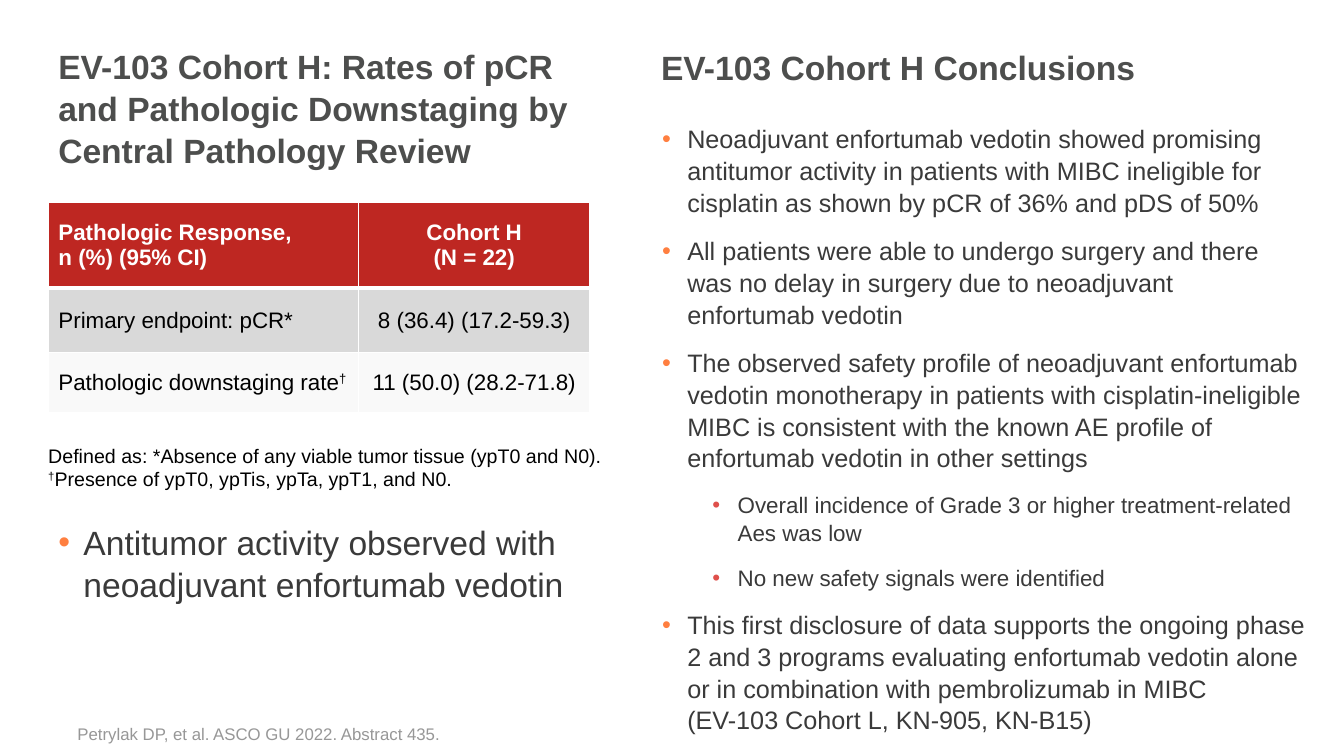
import pptx
import pptx.dml.color
import pptx.enum.text
import pptx.oxml
import pptx.oxml.ns
import pptx.util
from lxml import etree

Pt = pptx.util.Pt
ALIGN = pptx.enum.text.PP_ALIGN
ANCHOR = pptx.enum.text.MSO_ANCHOR

FONT = "Arial"
HEADING, BODY, BLACK, WHITE = "4D4E4D", "3A3A3A", "000000", "FFFFFF"
RED, GREY, PALE, CITATION = "BE2722", "D9D9D9", "F9F9F9", "979797"
LEVELS = [(18, "FF7F40", 18), (54, "DF504B", 16)]  # indent, bullet colour, text size

LEFT, COLUMN_W = 34.56, 386.64

# Text: a list of paragraphs; "^" before † raises it, "\n" breaks the line
LEFT_TITLE = ["EV-103 Cohort H: Rates of pCR and Pathologic Downstaging by "
              "Central Pathology Review"]
RIGHT_TITLE = ["EV-103 Cohort H Conclusions"]
FOOTNOTE = ["Defined as: *Absence of any viable tumor tissue (ypT0 and N0).",
            "^†Presence of ypT0, ypTis, ypTa, ypT1, and N0."]
SOURCE = ["Petrylak DP, et al. ASCO GU 2022. Abstract 435."]
SUMMARY = [(0, "Antitumor activity observed with neoadjuvant enfortumab vedotin")]
CONCLUSIONS = [
    (0, "Neoadjuvant enfortumab vedotin showed promising antitumor activity in patients "
        "with MIBC ineligible for cisplatin as shown by pCR of 36% and pDS of 50%"),
    (0, "All patients were able to undergo surgery and there was no delay in surgery "
        "due to neoadjuvant enfortumab vedotin"),
    (0, "The observed safety profile of neoadjuvant enfortumab vedotin monotherapy in "
        "patients with cisplatin-ineligible MIBC is consistent with the known AE profile "
        "of enfortumab vedotin in other settings"),
    (1, "Overall incidence of Grade 3 or higher treatment-related Aes was low"),
    (1, "No new safety signals were identified"),
    (0, "This first disclosure of data supports the ongoing phase 2 and 3 programs "
        "evaluating enfortumab vedotin alone or in combination with pembrolizumab in MIBC\n"
        "(EV-103 Cohort L, KN-905, KN-B15)"),
]

COL_WIDTHS = [221.76, 164.88]
ROWS = [  # height, fill, text colour, cells
    (61.2, RED, WHITE, [["Pathologic Response,\nn (%) (95% CI)"], ["Cohort H", "(N = 22)"]]),
    (46.08, GREY, BLACK, [["Primary endpoint: pCR*"], ["8 (36.4) (17.2-59.3)"]]),
    (42.48, PALE, BLACK, [["Pathologic downstaging rate^†"], ["11 (50.0) (28.2-71.8)"]]),
]


def rgb(value):
    return pptx.dml.color.RGBColor.from_string(value)


def add_run(p, text, size, color, bold=False):
    r = p.add_run()
    r.text = text
    r.font.name, r.font.size, r.font.bold = FONT, Pt(size), bold
    r.font.color.rgb = rgb(color)
    return r


def add_text(p, text, size, color, bold=False):
    """Write one paragraph, with its line breaks and raised daggers."""
    for i, line in enumerate(text.split("\n")):
        if i:
            p.add_line_break()
        before, raised, after = line.partition("^†")
        if before:
            add_run(p, before, size, color, bold)
        if raised:
            dagger = add_run(p, "†", size, color, bold)
            dagger.font._element.set("baseline", "30000")
        if after:
            add_run(p, after, size, color, bold)


def paragraphs(tf, items):
    for i, item in enumerate(items):
        yield (tf.add_paragraph() if i else tf.paragraphs[0]), item


def add_box(s, x, y, w, h, anchor=ANCHOR.TOP, wrap=True):
    tf = s.shapes.add_textbox(Pt(x), Pt(y), Pt(w), Pt(h)).text_frame
    tf.word_wrap, tf.vertical_anchor = wrap, anchor
    return tf


def add_plain(tf, lines, size, color, bold=False, spacing=1.0):
    for p, text in paragraphs(tf, lines):
        p.line_spacing = spacing
        add_text(p, text, size, color, bold)


def add_bullets(tf, items, size=None):
    for i, (p, (level, text)) in enumerate(paragraphs(tf, items)):
        indent, bullet_color, level_size = LEVELS[level]
        p.level = level
        p.line_spacing = 1.05
        p.space_before = Pt(12 if i else 0)
        pPr = p._p.get_or_add_pPr()
        pPr.set("marL", str(Pt(indent)))
        pPr.set("indent", str(-Pt(18)))
        clr = etree.SubElement(pPr, pptx.oxml.ns.qn("a:buClr"))
        etree.SubElement(clr, pptx.oxml.ns.qn("a:srgbClr"), val=bullet_color)
        etree.SubElement(pPr, pptx.oxml.ns.qn("a:buFont"), typeface=FONT)
        etree.SubElement(pPr, pptx.oxml.ns.qn("a:buChar"), char="•")
        add_text(p, text, size or level_size, BODY)


def set_borders(cell, widths):
    tcPr = cell._tc.get_or_add_tcPr()
    for i, (side, width) in enumerate(widths.items()):
        tcPr.insert(i, pptx.oxml.parse_xml(
            f'<a:ln{side} {pptx.oxml.ns.nsdecls("a")} w="{Pt(width)}"><a:solidFill>'
            f'<a:srgbClr val="{WHITE}"/></a:solidFill></a:ln{side}>'))


def add_response_table(s, x, y):
    height = sum(row[0] for row in ROWS)
    table = s.shapes.add_table(len(ROWS), len(COL_WIDTHS), Pt(x), Pt(y),
                               Pt(sum(COL_WIDTHS)), Pt(height)).table
    for column, width in zip(table.columns, COL_WIDTHS):
        column.width = Pt(width)
    for i, (row_h, fill, color, cells) in enumerate(ROWS):
        table.rows[i].height = Pt(row_h)
        for j, lines in enumerate(cells):
            cell = table.cell(i, j)
            cell.fill.solid()
            cell.fill.fore_color.rgb = rgb(fill)
            cell.vertical_anchor = ANCHOR.MIDDLE
            add_plain(cell.text_frame, lines, 16, color, bold=i == 0)
            for p in cell.text_frame.paragraphs:
                p.alignment = ALIGN.CENTER if j else ALIGN.LEFT
            set_borders(cell, {"L": 1, "R": 1, "T": 3 if i == 1 else 1, "B": 1 if i else 3})


prs = pptx.Presentation()
prs.slide_width, prs.slide_height = Pt(960), Pt(540)
s = prs.slides.add_slide(prs.slide_layouts[6])

add_plain(add_box(s, LEFT, 15.84, COLUMN_W, 120.96, ANCHOR.MIDDLE),
          LEFT_TITLE, 24, HEADING, True, 1.05)
add_bullets(add_box(s, LEFT, 367.92, COLUMN_W, 102.24), SUMMARY, 24)
add_response_table(s, LEFT, 144.72)
add_plain(add_box(s, 27.36, 313.2, 411.84, 41.04, wrap=False), FOOTNOTE, 14, BLACK)
add_plain(add_box(s, 48.24, 500.4, 846, 34.56, ANCHOR.BOTTOM), SOURCE, 12, CITATION)
add_plain(add_box(s, 465.12, 0.72, COLUMN_W, 93.6, ANCHOR.MIDDLE),
          RIGHT_TITLE, 24, HEADING, True, 1.05)
add_bullets(add_box(s, 465.84, 83.52, 474.48, 452.16), CONCLUSIONS)

prs.save("out.pptx")
